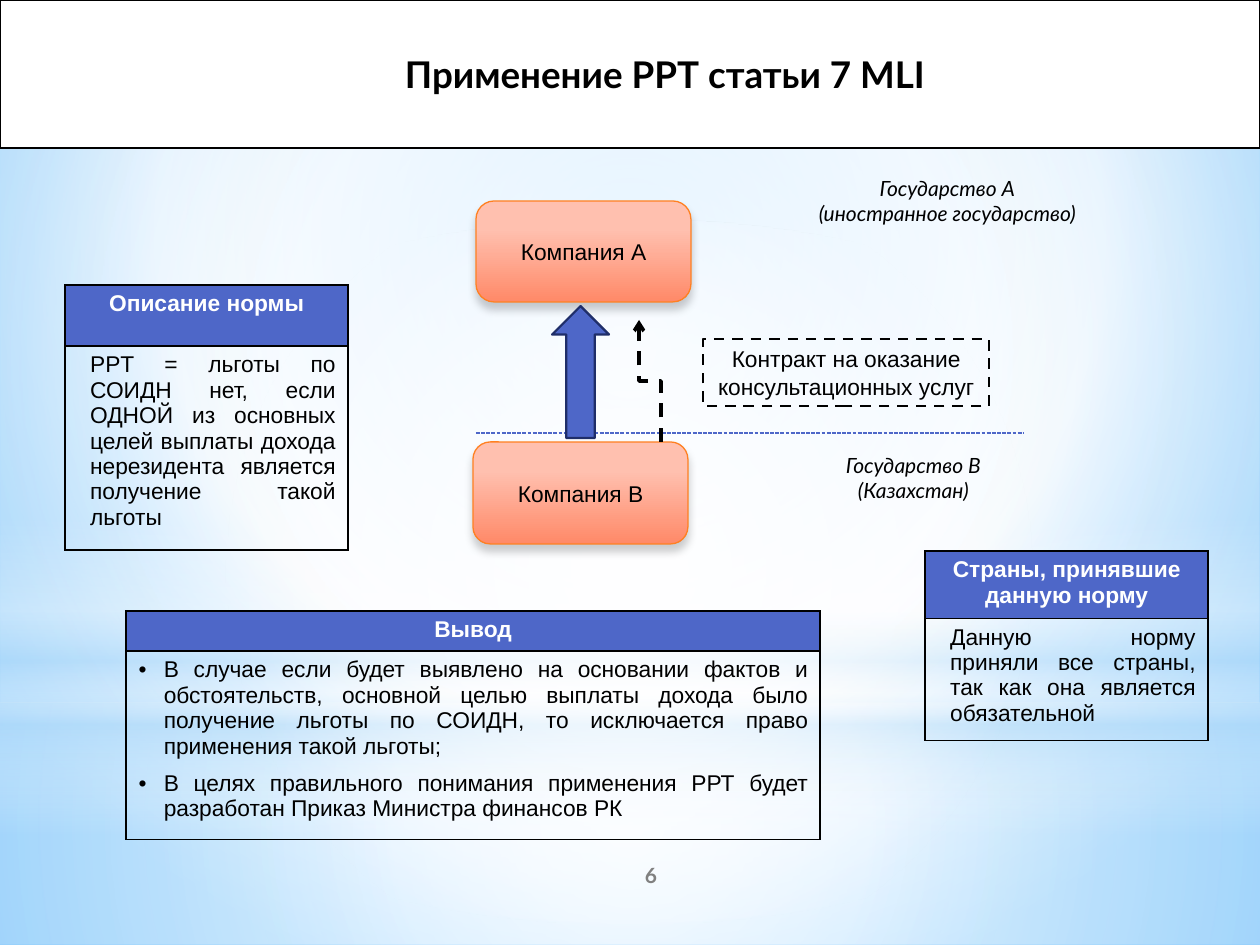
"""Build the slide on applying the principal purpose test of MLI article 7."""
from dataclasses import dataclass
from typing import Optional

from lxml import etree
from pptx import Presentation, util as u
from pptx.dml.color import RGBColor
from pptx.enum import dml, shapes, text
from pptx.oxml import parse_xml
from pptx.oxml.ns import nsdecls, qn

SCALE = u.Inches(1) / 126
COLORS = {"black": "000000", "white": "FFFFFF", "gray": "808080", "blue": "4E67C8",
          "navy": "1F2E69", "orange": "FF8021", "peach": "FFC0AF", "coral": "FF8968",
          "sky": "B4DCFA", "light": "9ED5FF", "azure": "5BB9FF"}
KIND = shapes.MSO_SHAPE
CENTER, JUSTIFY = text.PP_ALIGN.CENTER, text.PP_ALIGN.JUSTIFY


@dataclass(frozen=True)
class Style:
    size: float
    font: str = "Arial"
    color: str = "black"
    bold: bool = False
    italic: bool = False
    align: text.PP_ALIGN = CENTER


@dataclass(frozen=True)
class Glow:
    kind: KIND
    box: tuple
    stops: tuple
    focus: Optional[tuple] = (50, 50, 50, 50)


@dataclass(frozen=True)
class Label:
    box: tuple
    lines: tuple
    style: Style


@dataclass(frozen=True)
class Company:
    box: tuple
    name: str
    corner: float


@dataclass(frozen=True)
class Panel:
    box: tuple
    header_height: int
    header: tuple
    body: tuple
    bulleted: bool = False


PLAIN = Style(13)
HEADER = Style(13, color="white", bold=True)
BODY = Style(13, align=JUSTIFY)
STATE = Style(12, "Lato", italic=True)
TITLE = Style(21, "Lato", bold=True)
NUMBER = Style(12, "Lato", "gray", bold=True)

BACKDROP = ((0, "light", 100), (60, "white", 100), (100, "azure", 100))
GLOWS = (
    Glow(KIND.RECTANGLE, (0, 703, 1260, 242),
         ((0, "white", 91), (37, "white", 76), (100, "sky", 79))),
    Glow(KIND.RECTANGLE, (0, 0, 1260, 703),
         ((0, "white", 89), (48, "white", 62), (100, "sky", 79))),
    Glow(KIND.RECTANGLE, (0, 519, 1260, 315),
         ((0, "white", 0), (29, "white", 30), (45, "sky", 40),
          (55, "white", 26), (65, "sky", 60), (100, "white", 0)), None),
    Glow(KIND.OVAL, (0, 220, 1260, 703), ((0, "white", 100), (56, "white", 0))),
)
COMPANIES = (Company((476, 201, 215, 101), "Компания А", 0.18),
             Company((473, 442, 215, 102), "Компания В", 0.17))
LABELS = (
    Label((789, 171, 317, 60), ("Государство А", "(иностранное государство)"), STATE),
    Label((819, 455, 189, 45), ("Государство В", "(Казахстан)"), STATE),
    Label((525, 850, 252, 50), ("6",), NUMBER),
)
PANELS = (
    Panel((925, 551, 283, 164), 65, ("Страны, принявшие", "данную норму"),
          ("Данную норму приняли все страны, так как она является обязательной",)),
    Panel((65, 285, 283, 250), 61, ("Описание нормы",),
          ("PPT = льготы по СОИДН нет, если ОДНОЙ из основных целей выплаты дохода "
           "нерезидента является получение такой льготы",)),
    Panel((126, 611, 694, 213), 37, ("Вывод",),
          ("В случае если будет выявлено на основании фактов и обстоятельств, основной "
           "целью выплаты дохода было получение льготы по СОИДН, то исключается право "
           "применения такой льготы;",
           "В целях правильного понимания применения РРТ будет разработан Приказ "
           "Министра финансов РК"), True),
)


def px(*values: int) -> list:
    return [u.Emu(round(v * SCALE)) for v in values]


def rgb(name: str) -> RGBColor:
    return RGBColor.from_string(COLORS[name])


def set_gradient(fill, props, stops: tuple, focus: Optional[tuple] = None) -> None:
    fill.background()
    gs = "".join(f'<a:gs pos="{pos * 1000}"><a:srgbClr val="{COLORS[color]}">'
                 f'<a:alpha val="{alpha * 1000}"/></a:srgbClr></a:gs>'
                 for pos, color, alpha in stops)
    shade = '<a:lin ang="5400000" scaled="0"/>'
    if focus:
        sides = " ".join(f'{side}="{v * 1000}"' for side, v in zip("ltrb", focus))
        shade = f'<a:path path="circle"><a:fillToRect {sides}/></a:path>'
    grad = parse_xml(f'<a:gradFill {nsdecls("a")} rotWithShape="1">'
                     f'<a:gsLst>{gs}</a:gsLst>{shade}</a:gradFill>')
    props.replace(props.find(qn("a:noFill")), grad)


def set_line(line, color: str, width: float, dash=None) -> None:
    line.color.rgb = rgb(color)
    line.width = u.Pt(width)
    if dash:
        line.dash_style = dash


def write(tf, lines: tuple, style: Style) -> None:
    tf.word_wrap = True
    for i, line in enumerate(lines):
        p = tf.paragraphs[0] if i == 0 else tf.add_paragraph()
        p.alignment = style.align
        r = p.add_run()
        r.text = line
        r.font.name, r.font.size = style.font, u.Pt(style.size)
        r.font.bold, r.font.italic = style.bold, style.italic
        r.font.color.rgb = rgb(style.color)


def add_shape(s, kind: KIND, box: tuple):
    sp = s.shapes.add_shape(kind, *px(*box))
    sp.shadow.inherit = False
    return sp


def add_glow(s, glow: Glow) -> None:
    sp = add_shape(s, glow.kind, glow.box)
    sp.line.fill.background()
    set_gradient(sp.fill, sp.element.spPr, glow.stops, glow.focus)


def add_company(s, company: Company) -> None:
    sp = add_shape(s, KIND.ROUNDED_RECTANGLE, company.box)
    sp.adjustments[0] = company.corner
    set_gradient(sp.fill, sp.element.spPr, ((28, "peach", 100), (100, "coral", 100)))
    set_line(sp.line, "orange", 0.75)
    sp.element.spPr.find(qn("a:effectLst")).append(parse_xml(
        f'<a:outerShdw {nsdecls("a")} blurRad="63500" dist="50800" dir="5400000" '
        f'rotWithShape="0"><a:srgbClr val="{COLORS["black"]}"><a:alpha val="20000"/>'
        '</a:srgbClr></a:outerShdw>'))
    write(sp.text_frame, (company.name,), PLAIN)


def add_label(s, label: Label) -> None:
    tf = s.shapes.add_textbox(*px(*label.box)).text_frame
    tf.vertical_anchor = text.MSO_ANCHOR.MIDDLE
    write(tf, label.lines, label.style)


def add_line(s, kind, ends: tuple, color: str, width: float, dash):
    line = s.shapes.add_connector(kind, *px(*ends))
    set_line(line.line, color, width, dash)
    etree.SubElement(line.element.spPr, qn("a:effectLst"))
    return line


def add_panel(s, panel: Panel) -> None:
    table = s.shapes.add_table(2, 1, *px(*panel.box)).table
    table.first_row = table.horz_banding = False
    heights = px(panel.header_height, panel.box[3] - panel.header_height)
    for row, height in zip(table.rows, heights):
        row.height = height
        tc_pr = row.cells[0]._tc.get_or_add_tcPr()
        for side in "LRTB":
            tc_pr.append(parse_xml(
                f'<a:ln{side} {nsdecls("a")} w="12700"><a:solidFill><a:srgbClr '
                f'val="{COLORS["black"]}"/></a:solidFill></a:ln{side}>'))
    header, body = table.cell(0, 0), table.cell(1, 0)
    header.fill.solid()
    header.fill.fore_color.rgb = rgb("blue")
    body.fill.background()
    write(header.text_frame, panel.header, HEADER)
    write(body.text_frame, panel.body, BODY)
    for p in body.text_frame.paragraphs:
        p.space_before = u.Pt(6.8)
        p_pr = p._p.get_or_add_pPr()
        p_pr.set("marL", str(u.Inches(0.2 if panel.bulleted else 0.1)))
        if panel.bulleted:
            p_pr.set("indent", str(u.Inches(-0.2)))
            etree.SubElement(p_pr, qn("a:buFont")).set("typeface", "Arial")
            etree.SubElement(p_pr, qn("a:buChar")).set("char", "•")


def add_title(s) -> None:
    sp = s.shapes.title
    sp.left, sp.top, sp.width, sp.height = px(0, 0, 1260, 148)
    sp.fill.solid()
    sp.fill.fore_color.rgb = rgb("white")
    set_line(sp.line, "black", 1.25)
    tf = sp.text_frame
    tf.auto_size = text.MSO_AUTO_SIZE.NONE
    tf.vertical_anchor = text.MSO_ANCHOR.MIDDLE
    tf.margin_left, tf.margin_right = px(83, 13)
    write(tf, ("Применение РРТ статьи 7 MLI",), TITLE)
    s.shapes._spTree.append(sp.element)


def main() -> None:
    prs = Presentation()
    prs.slide_width, prs.slide_height = px(1260, 945)
    s = prs.slides.add_slide(prs.slide_layouts[5])
    fill = s.background.fill
    fill.background()
    set_gradient(fill, s.element.find(".//" + qn("p:bgPr")), BACKDROP, (20, 10, 20, 60))
    for glow in GLOWS:
        add_glow(s, glow)
    for company in COMPANIES:
        add_company(s, company)

    contract = add_shape(s, KIND.RECTANGLE, (703, 339, 286, 67))
    contract.fill.background()
    set_line(contract.line, "black", 1.5, dml.MSO_LINE.DASH)
    contract.text_frame.margin_left, contract.text_frame.margin_right = px(11, 11)
    write(contract.text_frame, ("Контракт на оказание консультационных услуг",), PLAIN)

    add_line(s, shapes.MSO_CONNECTOR.STRAIGHT, (476, 433, 1023, 433), "blue", 0.75,
             dml.MSO_LINE.SQUARE_DOT)
    for label in LABELS:
        add_label(s, label)
    for panel in PANELS:
        add_panel(s, panel)

    service = add_line(s, shapes.MSO_CONNECTOR.ELBOW, (589, 392, 711, 370), "black", 2,
                       dml.MSO_LINE.DASH)
    service.element.spPr.find(qn("a:xfrm")).set("rot", str(270 * 60000))
    etree.SubElement(service.line._ln, qn("a:tailEnd")).set("type", "arrow")

    add_title(s)
    payment = add_shape(s, KIND.DOWN_ARROW, (552, 306, 57, 132))
    payment.rotation = 180
    payment.fill.solid()
    payment.fill.fore_color.rgb = rgb("blue")
    set_line(payment.line, "navy", 1.25)
    prs.save("out.pptx")


if __name__ == "__main__":
    main()
